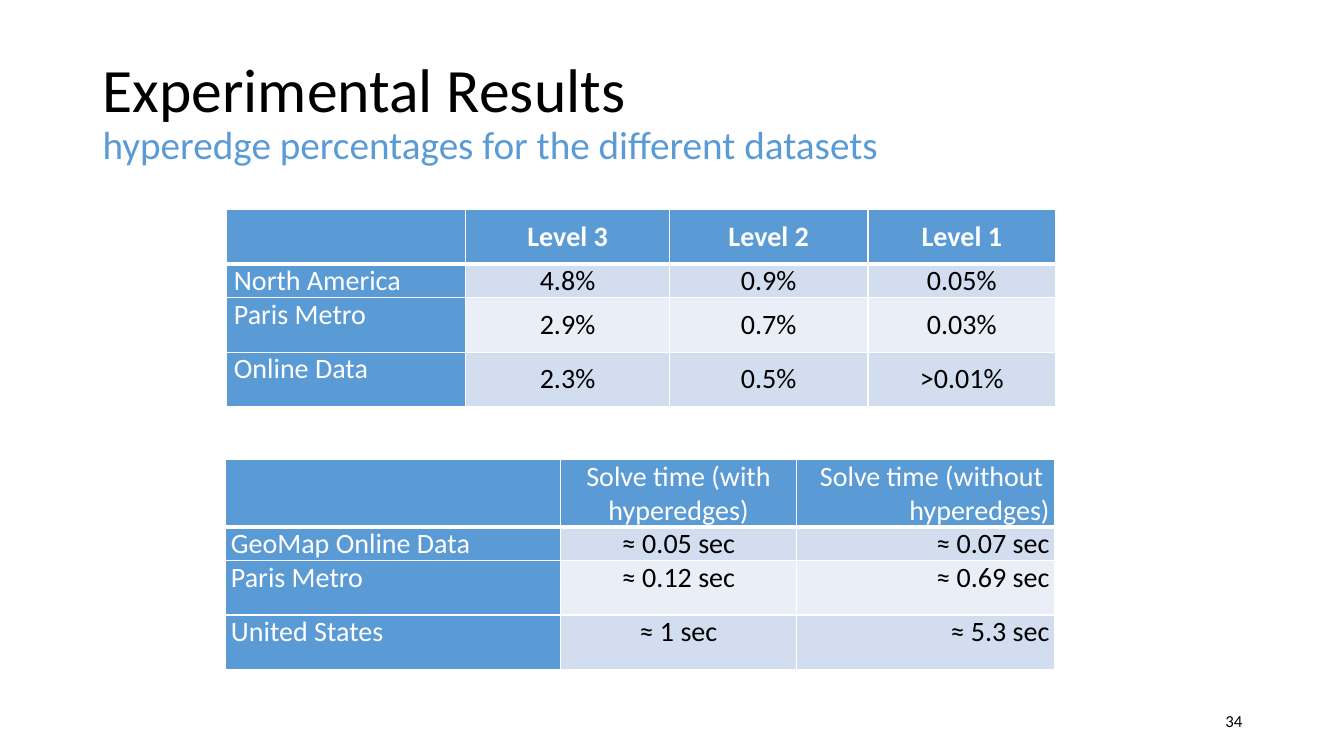
from lxml.etree import SubElement
from pptx import Presentation
from pptx.dml.color import RGBColor
from pptx.enum.text import MSO_ANCHOR, PP_ALIGN
from pptx.oxml.ns import qn
from pptx.util import Inches, Pt

BLUE, WHITE, BLACK = "5B9BD5", "FFFFFF", "000000"
BANDS = ["D2DEEF", "EAEFF7"]
ROW_HEIGHTS = [0.54, 0.33, 0.54, 0.54]
LEFT, CENTER, RIGHT, JUSTIFY = PP_ALIGN.LEFT, PP_ALIGN.CENTER, PP_ALIGN.RIGHT, PP_ALIGN.JUSTIFY
TOP, MIDDLE = MSO_ANCHOR.TOP, MSO_ANCHOR.MIDDLE


def add_span(para, text, size, color, bold=False):
    span = para.add_run()
    span.text = text
    span.font.name = "Calibri"
    span.font.size = Pt(size)
    span.font.bold = bold
    span.font.color.rgb = RGBColor.from_string(color)


def add_text_box(slide, left, top, width, height):
    """Add a wrapping, vertically centred box and return its first paragraph."""
    frame = slide.shapes.add_textbox(Inches(left), Inches(top), Inches(width), Inches(height)).text_frame
    frame.word_wrap = True
    frame.vertical_anchor = MIDDLE
    return frame.paragraphs[0]


deck = Presentation()
deck.slide_width, deck.slide_height = Inches(13.33), Inches(7.5)
page = deck.slides.add_slide(deck.slide_layouts[6])

title = add_text_box(page, 0.92, 0.4, 11.5, 1.45)
title.line_spacing = 0.9
add_span(title, "Experimental Results", 44, BLACK)
title.add_line_break()
add_span(title, "hyperedge percentages for the different datasets", 28, BLUE)

page_number = add_text_box(page, 9.42, 6.95, 3, 0.4)
page_number.alignment = RIGHT
add_span(page_number, "34", 12, BLACK)

tables = [
    {
        "left": 2.25, "top": 2.08, "widths": [2.37, 2.02, 1.97, 1.86],
        "inset": 0.07, "anchor": MIDDLE, "bold_header": True,
        "aligns": [JUSTIFY, CENTER, CENTER, CENTER],
        "rows": [
            ["", "Level 3", "Level 2", "Level 1"],
            ["North America", "4.8%", "0.9%", "0.05%"],
            ["Paris Metro", "2.9%", "0.7%", "0.03%"],
            ["Online Data", "2.3%", "0.5%", ">0.01%"],
        ],
    },
    {
        "left": 2.24, "top": 4.56, "widths": [3.32, 2.34, 2.56],
        "inset": 0.05, "anchor": TOP, "bold_header": False,
        "aligns": [LEFT, CENTER, RIGHT],
        "rows": [
            ["", "Solve time (with hyperedges)", "Solve time (without  hyperedges)"],
            ["GeoMap Online Data", "≈ 0.05 sec", "≈ 0.07 sec"],
            ["Paris Metro", "≈ 0.12 sec", "≈ 0.69 sec"],
            ["United States", "≈ 1 sec", "≈ 5.3 sec"],
        ],
    },
]

for data in tables:
    table = page.shapes.add_table(
        len(data["rows"]), len(data["widths"]), Inches(data["left"]), Inches(data["top"]),
        Inches(sum(data["widths"])), Inches(sum(ROW_HEIGHTS))).table
    for column, width in zip(table.columns, data["widths"]):
        column.width = Inches(width)
    for row, height in zip(table.rows, ROW_HEIGHTS):
        row.height = Inches(height)

    for r, texts in enumerate(data["rows"]):
        for c, text in enumerate(texts):
            cell = table.cell(r, c)
            is_label = r == 0 or c == 0
            cell.margin_left = cell.margin_right = Inches(data["inset"])
            cell.margin_top = cell.margin_bottom = 0
            cell.vertical_anchor = TOP if c == 0 else data["anchor"]

            properties = cell._tc.get_or_add_tcPr()
            for side in ("lnL", "lnR", "lnT", "lnB"):
                weight = 3 if r == 0 and side == "lnB" else 1
                border = SubElement(properties, qn(f"a:{side}"), w=str(Pt(weight)))
                border_fill = SubElement(border, qn("a:solidFill"))
                SubElement(border_fill, qn("a:srgbClr"), val=WHITE)
            cell.fill.solid()
            cell.fill.fore_color.rgb = RGBColor.from_string(BLUE if is_label else BANDS[(r - 1) % 2])

            if text:
                para = cell.text_frame.paragraphs[0]
                para.alignment = data["aligns"][c]
                para.space_after = Pt(4)
                add_span(para, text, 20, WHITE if is_label else BLACK, r == 0 and data["bold_header"])

deck.save("out.pptx")
